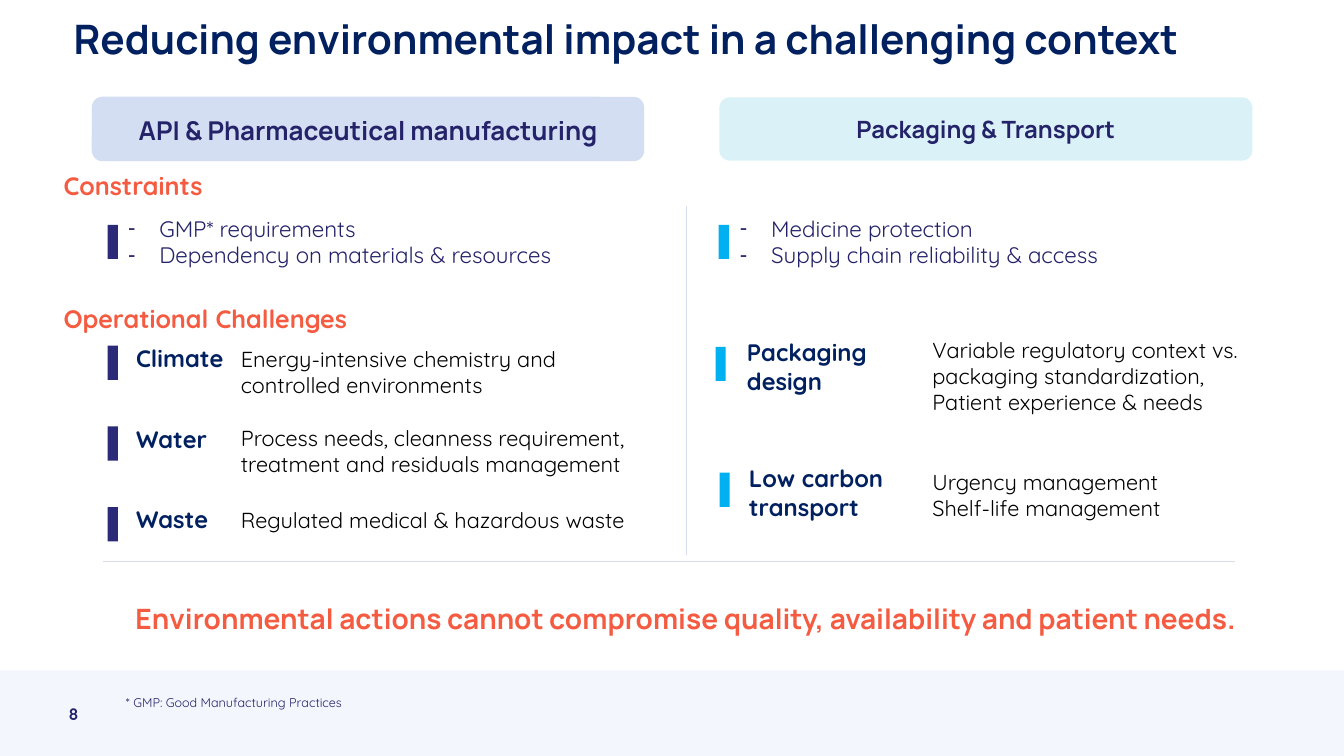
import pptx
import pptx.dml.color
import pptx.enum.shapes
import pptx.enum.text
import pptx.oxml.ns
import pptx.util
from lxml import etree

WIDTH, HEIGHT = pptx.util.Inches(13.33), pptx.util.Inches(7.5)
COLORS = {
    "title": "002060", "ink": "242269", "text": "000000", "accent": "F55B41",
    "api": "2B2A78", "pack": "00B0F0", "api_head": "D3DEF2", "pack_head": "DAF2F7",
    "rule": "D7DEEA", "footer": "F3F7FD", "white": "FFFFFF",
}
SHAPE = pptx.enum.shapes.MSO_SHAPE
ALIGN = pptx.enum.text.PP_ALIGN
ANCHOR = pptx.enum.text.MSO_ANCHOR
BAR_W, BAR_H = 0.75, 4.53

# Boxes are (left, top, width, height) in percent of the slide's width and height.
HEADERS = [
    ("API & Pharmaceutical manufacturing", (6.83, 12.8, 41.1, 8.53), "api_head", None, 18.5, 1.05),
    ("Packaging & Transport", (53.48, 12.8, 39.75, 8.53), "pack_head", "white", 17, None),
]
SECTIONS = [("Constraints", 22.53, 10.5), ("Operational Challenges", 40.13, 24)]
CONSTRAINTS = [
    (["GMP* requirements", "Dependency on materials & resources"],
     (9.15, 28.13, 36.2, 7.73), 8.02, "api"),
    (["Medicine protection", "Supply chain reliability & access"],
     (54.68, 28.13, 39.6, 7.73), 53.48, "pack"),
]
API_CHALLENGES = [
    ("Climate", ["Energy-intensive chemistry and controlled environments"], 45.47, 31.1),
    ("Water", ["Process needs, cleanness requirement, treatment and residuals management"],
     55.87, 32.5),
    ("Waste", ["Regulated medical & hazardous waste"], 66.8, 31.7),
]
PACK_CHALLENGES = [
    ("Packaging design",
     ["Variable regulatory context vs. packaging standardization,", "Patient experience & needs"],
     (53.25, 45.87), (55.2, 44.4), (69, 44.27, 28.8, 10.93)),
    ("Low carbon transport", ["Urgency management", "Shelf-life management"],
     (53.55, 62.53), (55.35, 61.07), (69, 61.73, 24.45, 7.47)),
]


def across(share):
    return round(WIDTH * share / 100)


def down(share):
    return round(HEIGHT * share / 100)


def place(box):
    left, top, width, height = box
    return across(left), down(top), across(width), down(height)


def rgb(name):
    return pptx.dml.color.RGBColor.from_string(COLORS[name])


def add_dash(p):
    """Give a paragraph a hanging dash."""
    pPr = p._p.get_or_add_pPr()
    indent = pptx.util.Inches(0.31)
    pPr.set("marL", str(indent))
    pPr.set("indent", str(-indent))
    etree.SubElement(pPr, pptx.oxml.ns.qn("a:buChar")).set("char", "-")


def write(sp, lines, *, size, color, font="Quicksand", bold=False, align=ALIGN.LEFT,
          anchor=ANCHOR.TOP, insets=(0.05, 0.02), spacing=None, dash=False):
    """Fill a shape's text frame, one paragraph per line."""
    tf = sp.text_frame
    tf.word_wrap = True
    tf.auto_size = pptx.enum.text.MSO_AUTO_SIZE.NONE
    tf.vertical_anchor = anchor
    tf.margin_left = tf.margin_right = pptx.util.Inches(insets[0])
    tf.margin_top = tf.margin_bottom = pptx.util.Inches(insets[1])
    for i, line in enumerate(lines):
        p = tf.paragraphs[0] if i == 0 else tf.add_paragraph()
        p.alignment = align
        p.space_before = pptx.util.Pt(0)
        if spacing:
            p.line_spacing = spacing
        if dash:
            add_dash(p)
        r = p.add_run()
        r.text = line
        r.font.name, r.font.size, r.font.bold = font, pptx.util.Pt(size), bold
        r.font.color.rgb = rgb(color)


def add_text(s, box, lines, **fmt):
    write(s.shapes.add_textbox(*place(box)), lines, **fmt)


def fill_placeholder(sp, box, lines, **fmt):
    sp.left, sp.top, sp.width, sp.height = place(box)
    write(sp, lines, **fmt)


def add_block(s, box, fill, kind=SHAPE.RECTANGLE, line=None):
    sp = s.shapes.add_shape(kind, *place(box))
    sp.shadow.inherit = False
    sp.fill.solid()
    sp.fill.fore_color.rgb = rgb(fill)
    if line:
        sp.line.color.rgb = rgb(line)
        sp.line.width = pptx.util.Pt(0.8)
    else:
        sp.line.fill.background()
    return sp


def add_rule(s, x1, y1, x2, y2, weight):
    line = s.shapes.add_connector(pptx.enum.shapes.MSO_CONNECTOR.STRAIGHT,
                                  across(x1), down(y1), across(x2), down(y2))
    line.line.color.rgb = rgb("rule")
    line.line.width = pptx.util.Pt(weight)
    etree.SubElement(line._element.spPr, pptx.oxml.ns.qn("a:effectLst"))


def add_challenge(s, name, details, bar, label, detail_box, color):
    """A marker bar, a bold name and its description."""
    add_block(s, (*bar, BAR_W, BAR_H), color)
    add_text(s, label, [name], size=17, color="title", bold=True)
    add_text(s, detail_box, details, size=15.5, color="text")


def main():
    prs = pptx.Presentation()
    prs.slide_width, prs.slide_height = WIDTH, HEIGHT
    s = prs.slides.add_slide(prs.slide_layouts.get_by_name("Two Content"))

    # Footer
    add_block(s, (0, 88.67, 100, 11.33), "footer")
    add_text(s, (9, 91.6, 33.75, 5.33), ["* GMP: Good Manufacturing Practices"],
             size=9, color="ink")
    add_text(s, (5.1, 91.73, 3.4, 5.33), ["8"], size=12, color="ink", bold=True,
             anchor=ANCHOR.MIDDLE, insets=(0, 0))

    # Title and column headers
    fill_placeholder(s.shapes.title, (5.1, 2.13, 91.95, 8.27),
                     ["Reducing environmental impact in a challenging context"],
                     size=29, color="title", font="Manrope", bold=True,
                     spacing=pptx.util.Pt(32))
    for text, box, fill, line, size, spacing in HEADERS:
        sp = add_block(s, box, fill, SHAPE.ROUNDED_RECTANGLE, line)
        write(sp, [text], size=size, color="ink", font="Manrope", bold=True,
              align=ALIGN.CENTER, anchor=ANCHOR.MIDDLE, insets=(0.08, 0.04), spacing=spacing)

    # Section headings and dividers
    for text, top, width in SECTIONS:
        add_text(s, (4.73, top, width, 4), [text], size=18, color="accent", bold=True,
                 insets=(0, 0))
    add_rule(s, 51.08, 27.2, 51.08, 73.47, 1.2)
    add_rule(s, 7.65, 74.27, 91.88, 74.27, 1.3)

    # Constraints
    for idx, (lines, box, bar_left, color) in enumerate(CONSTRAINTS, start=1):
        fill_placeholder(s.placeholders[idx], box, lines, size=16, color="ink", dash=True)
        add_block(s, (bar_left, 29.73, BAR_W, BAR_H), color)

    # Operational challenges
    for i, (name, details, top, width) in enumerate(API_CHALLENGES):
        bar_top = 45.73 + i * 10.67
        add_challenge(s, name, details, (8.02, bar_top), (9.75, bar_top - 0.53, 8.6, BAR_H),
                      (17.55, top, width, 7.47), "api")
    for name, details, bar, label, detail_box in PACK_CHALLENGES:
        add_challenge(s, name, details, bar, (*label, 14.6, 8.13), detail_box, "pack")

    # Key message
    add_text(s, (4.2, 79.33, 93.68, 5.07),
             ["Environmental actions cannot compromise quality, availability and patient needs."],
             size=20, color="accent", font="Manrope", bold=True, align=ALIGN.CENTER)

    prs.save("out.pptx")


if __name__ == "__main__":
    main()
